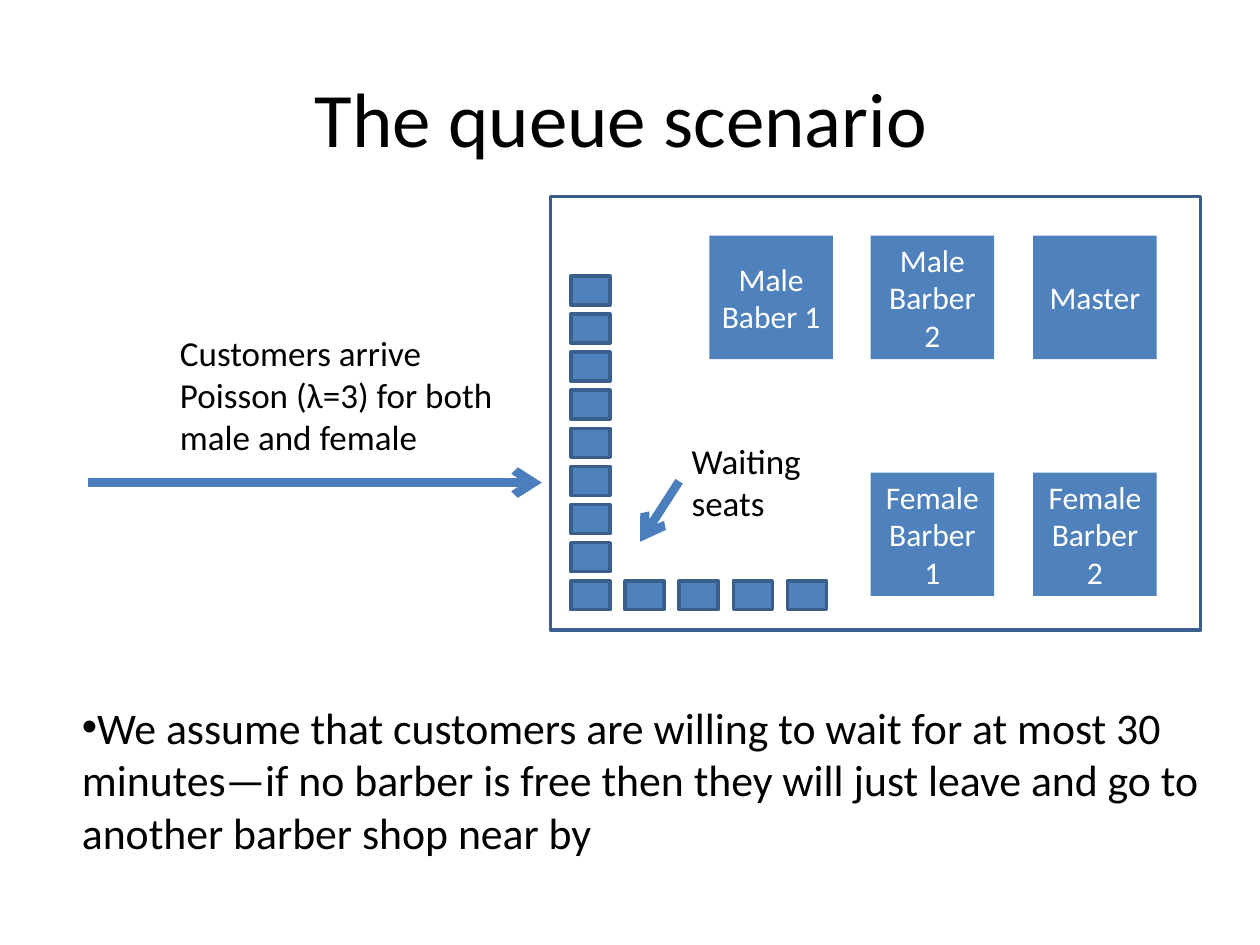
from typing import NamedTuple

from lxml.etree import SubElement
from pptx import Presentation
from pptx.dml.color import RGBColor
from pptx.enum.shapes import MSO_CONNECTOR as Connector, MSO_SHAPE as Shape
from pptx.enum.text import MSO_ANCHOR as Anchor, MSO_AUTO_SIZE as AutoSize, PP_ALIGN as Align
from pptx.oxml.ns import qn
from pptx.util import Inches, Pt

FONT = "Calibri"
COLORS = {"text": "000000", "label": "FFFFFF", "fill": "4F81BD",
          "outline": "3A5F8C", "arrow": "4B7EBC"}

BARBER_SIZE = 0.98
BARBER_COLUMNS = (5.63, 6.91, 8.2)
MALE_ROW, FEMALE_ROW = 1.87, 3.75

SEAT_LEFT, SEAT_TOP = 4.53, 2.19
SEAT_WIDTH, SEAT_HEIGHT = 0.31, 0.23
SEAT_STEP_X, SEAT_STEP_Y = 0.43, 0.3025
SEATS_DOWN, SEATS_ACROSS = 9, 5


class Box(NamedTuple):
    left: float
    top: float
    width: float
    height: float

    def lengths(self) -> list:
        return [Inches(v) for v in self]


class Barber(NamedTuple):
    label: str
    column: int
    row: float


class Note(NamedTuple):
    text: str
    box: Box


class Arrow(NamedTuple):
    start: tuple[float, float]
    end: tuple[float, float]


BARBERS = [
    Barber("Master", 2, MALE_ROW),
    Barber("Male Barber 2", 1, MALE_ROW),
    Barber("Male\nBaber 1", 0, MALE_ROW),
    Barber("Female Barber 2", 2, FEMALE_ROW),
    Barber("Female Barber 1", 1, FEMALE_ROW),
]
NOTES = [
    Note("Customers arrive Poisson (λ=3) for both male and female",
         Box(1.33, 2.58, 2.97, 1.11)),
    Note("Waiting\vseats", Box(5.39, 3.44, 1.09, 0.77)),
]
ARROWS = [Arrow((0.7, 3.83), (4.3, 3.83)), Arrow((5.39, 3.82), (5.08, 4.3))]


def rgb(name: str) -> RGBColor:
    return RGBColor.from_string(COLORS[name])


def write(tf, text: str, size: float, color: str, align: Align) -> None:
    tf.text = text
    tf.word_wrap = True
    for p in tf.paragraphs:
        p.alignment = align
        for r in p.runs:
            r.font.name = FONT
            r.font.size = Pt(size)
            r.font.color.rgb = rgb(color)


def place(s, box: Box) -> None:
    s.left, s.top, s.width, s.height = box.lengths()


def add_rect(slide, box: Box, filled: bool = True, outlined: bool = True):
    s = slide.shapes.add_shape(Shape.RECTANGLE, *box.lengths())
    s.shadow.inherit = False
    if filled:
        s.fill.solid()
        s.fill.fore_color.rgb = rgb("fill")
    else:
        s.fill.background()
    if outlined:
        s.line.color.rgb = rgb("outline")
        s.line.width = Pt(2)
    else:
        s.line.fill.background()
    return s


def add_barber(slide, barber: Barber) -> None:
    box = Box(BARBER_COLUMNS[barber.column], barber.row, BARBER_SIZE, BARBER_SIZE)
    tf = add_rect(slide, box, outlined=False).text_frame
    tf.margin_left = tf.margin_right = Inches(0.09)
    tf.vertical_anchor = Anchor.MIDDLE
    write(tf, barber.label, 18, "label", Align.CENTER)


def add_seats(slide) -> None:
    """Draw the L-shaped run of seats: down the wall, then along the floor."""
    corner = SEATS_DOWN - 1
    cells = [(0, row) for row in range(SEATS_DOWN)]
    cells += [(col, corner) for col in range(1, SEATS_ACROSS)]
    for col, row in cells:
        add_rect(slide, Box(SEAT_LEFT + col * SEAT_STEP_X,
                            SEAT_TOP + row * SEAT_STEP_Y, SEAT_WIDTH, SEAT_HEIGHT))


def add_note(slide, note: Note) -> None:
    tf = slide.shapes.add_textbox(*note.box.lengths()).text_frame
    write(tf, note.text, 20, "text", Align.LEFT)
    tf.auto_size = AutoSize.SHAPE_TO_FIT_TEXT


def add_arrow(slide, arrow: Arrow) -> None:
    ends = [Inches(v) for v in arrow.start + arrow.end]
    s = slide.shapes.add_connector(Connector.STRAIGHT, *ends)
    s.line.color.rgb = rgb("arrow")
    s.line.width = Pt(5)
    SubElement(s.line._get_or_add_ln(), qn("a:tailEnd"), type="arrow")
    SubElement(s._element.spPr, qn("a:effectLst"))


def fill_placeholders(slide) -> None:
    title, body = slide.shapes.title, slide.placeholders[1]
    place(title, Box(0.5, 0.3, 9, 1.25))
    title.text_frame.vertical_anchor = Anchor.MIDDLE
    write(title.text_frame, "The queue scenario ", 44, "text", Align.CENTER)

    place(body, Box(0.55, 5.51, 9.3, 1.36))
    tf = body.text_frame
    write(tf, "We assume that customers are willing to wait for at most 30 minutes—if no "
              "barber is free then they will just leave and go to another barber shop near by",
          25, "text", Align.LEFT)
    tf.auto_size = AutoSize.SHAPE_TO_FIT_TEXT
    p = tf.paragraphs[0]
    p.space_before = Pt(0)
    pPr = p._p.get_or_add_pPr()
    pPr.set("marL", "0")
    pPr.set("indent", "0")
    SubElement(pPr, qn("a:buFont"), typeface="Arial")
    SubElement(pPr, qn("a:buChar"), char="•")


def main() -> None:
    prs = Presentation()
    prs.slide_width, prs.slide_height = Inches(10), Inches(7.5)
    slide = prs.slides.add_slide(prs.slide_layouts[1])
    fill_placeholders(slide)
    add_rect(slide, Box(4.37, 1.56, 5.16, 3.44), filled=False)
    for barber in BARBERS:
        add_barber(slide, barber)
    add_seats(slide)
    for note in NOTES:
        add_note(slide, note)
    for arrow in ARROWS:
        add_arrow(slide, arrow)
    prs.save("out.pptx")


if __name__ == "__main__":
    main()
